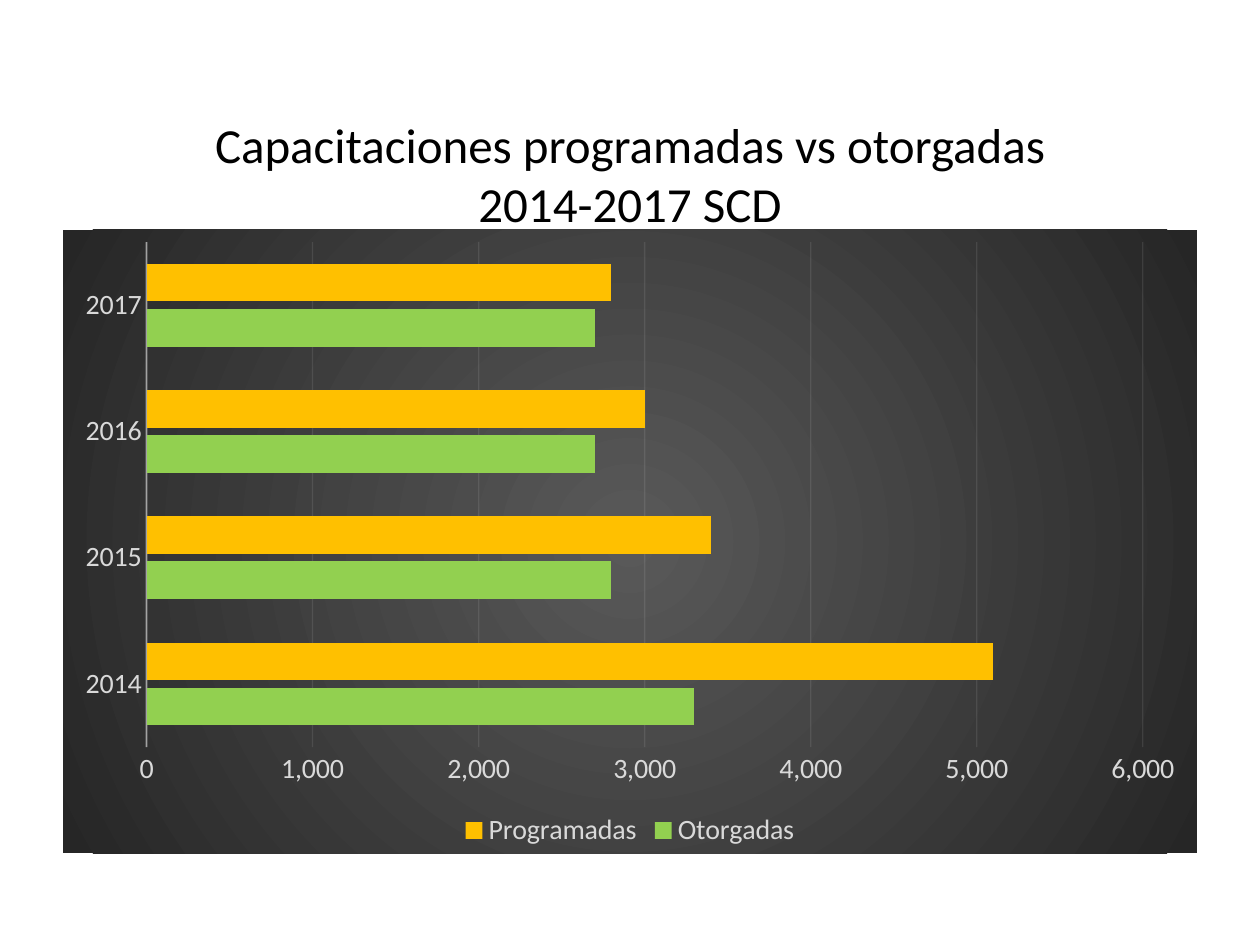
import pptx
import pptx.chart.data
import pptx.dml.color
import pptx.enum.chart
import pptx.enum.text
import pptx.oxml
import pptx.oxml.ns
import pptx.util
import lxml.etree

THEME = {
    "font": "Calibri", "title_size": 28, "label_size": 16,
    "title": "000000", "label": "D9D9D9", "line": "F2F2F2",
    "center": "595959", "edge": "262626",
    "Otorgadas": "92D050", "Programadas": "FFC000",
}
rgb = pptx.dml.color.RGBColor.from_string
qn = pptx.oxml.ns.qn


def style_font(font, size, color):
    font.name = THEME["font"]
    font.size = pptx.util.Pt(THEME[size])
    font.color.rgb = rgb(THEME[color])


def style_line(line, width, opacity):
    line.width = pptx.util.Pt(width)
    line.color.rgb = rgb(THEME["line"])
    color = line.fill._xPr.find(".//" + qn("a:srgbClr"))
    lxml.etree.SubElement(color, qn("a:alpha"), val=str(opacity * 1000))


prs = pptx.Presentation()
prs.slide_width, prs.slide_height = pptx.util.Inches(10), pptx.util.Inches(7.5)
W, H = prs.slide_width, prs.slide_height
margin = int(W * 0.05)
s = prs.slides.add_slide(prs.slide_layouts[6])

# Title
sp = s.shapes.add_textbox(margin, int(H * 0.1), W - 2 * margin, int(H / 6))
tf = sp.text_frame
tf.word_wrap = True
tf.vertical_anchor = pptx.enum.text.MSO_ANCHOR.MIDDLE
p = tf.paragraphs[0]
p.text = "Capacitaciones programadas vs otorgadas\v2014-2017 SCD"
p.alignment = pptx.enum.text.PP_ALIGN.CENTER
style_font(p.font, "title_size", "title")

# Bar chart
data = pptx.chart.data.CategoryChartData(number_format="#,##0")
data.categories = ["2014", "2015", "2016", "2017"]
data.add_series("Otorgadas", [3300, 2800, 2700, 2700])
data.add_series("Programadas", [5100, 3400, 3000, 2800])
chart = s.shapes.add_chart(
    pptx.enum.chart.XL_CHART_TYPE.BAR_CLUSTERED,
    margin, int(H * 0.243), W - 2 * margin, int(H * 0.66), data).chart
chart.has_title = False
style_font(chart.font, "label_size", "label")

plot = chart.plots[0]
plot.gap_width, plot.overlap = 115, -20
plot.vary_by_categories = False
for series in plot.series:
    series.format.fill.solid()
    series.format.fill.fore_color.rgb = rgb(THEME[series.name])

# Axes and gridlines
for axis in (chart.category_axis, chart.value_axis):
    axis.major_tick_mark = pptx.enum.chart.XL_TICK_MARK.NONE
    axis.minor_tick_mark = pptx.enum.chart.XL_TICK_MARK.NONE
    style_font(axis.tick_labels.font, "label_size", "label")
style_line(chart.category_axis.format.line, 1, 54)
values = chart.value_axis
values.minimum_scale, values.maximum_scale, values.major_unit = 0, 6000, 1000
values.tick_labels.number_format = "#,##0"
values.tick_labels.number_format_is_linked = False
values.format.line.fill.background()
style_line(values.major_gridlines.format.line, 0.75, 10)

# Legend
chart.has_legend = True
chart.legend.position = pptx.enum.chart.XL_LEGEND_POSITION.BOTTOM
chart.legend.include_in_layout = False
style_font(chart.legend.font, "label_size", "label")

# Radial background, placed ahead of the chart's text properties
background = pptx.oxml.parse_xml(f"""
<c:spPr {pptx.oxml.ns.nsdecls("c", "a")}>
  <a:gradFill>
    <a:gsLst>
      <a:gs pos="0"><a:srgbClr val="{THEME['center']}"/></a:gs>
      <a:gs pos="100000"><a:srgbClr val="{THEME['edge']}"/></a:gs>
    </a:gsLst>
    <a:path path="circle"><a:fillToRect l="50000" t="50000" r="50000" b="50000"/></a:path>
  </a:gradFill>
  <a:ln><a:noFill/></a:ln>
</c:spPr>""")
chart.element.find(qn("c:txPr")).addprevious(background)

prs.save("out.pptx")
